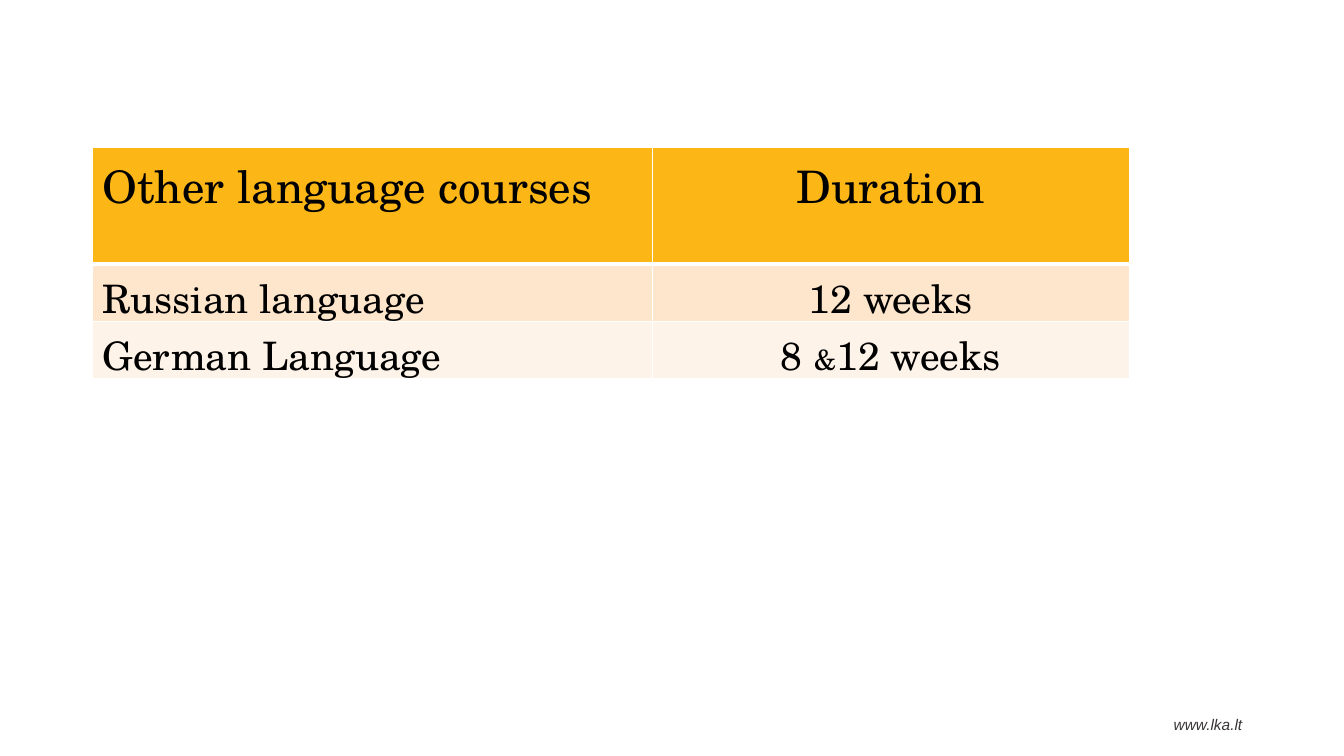
from lxml import etree
from pptx import Presentation
from pptx.dml.color import RGBColor
from pptx.enum.text import PP_ALIGN
from pptx.oxml.ns import qn
from pptx.util import Inches, Pt

LEFT, CENTER, RIGHT = PP_ALIGN.LEFT, PP_ALIGN.CENTER, PP_ALIGN.RIGHT
BLANK_LAYOUT = 6
COLORS = {
    "header": "FCB716",
    "band_dark": "FEE6CC",
    "band_light": "FEF3E8",
    "border": "FFFFFF",
    "text": "000000",
    "footer": "3B3536",
}


class SlideBuilder:
    """Holds the style and the current slide."""

    table_font = "TeX Gyre Schola"
    footer_font = "Arial"

    def __init__(self, prs):
        self.s = prs.slides.add_slide(prs.slide_layouts[BLANK_LAYOUT])

    def style(self, font, name, size, color):
        font.name = name
        font.size = Pt(size)
        font.color.rgb = RGBColor.from_string(COLORS[color])

    def footer(self, text, left, top, width, height):
        sp = self.s.shapes.add_textbox(
            Inches(left), Inches(top), Inches(width), Inches(height))
        tf = sp.text_frame
        tf.word_wrap = True
        p = tf.paragraphs[0]
        p.text = text
        p.alignment = RIGHT
        self.style(p.font, self.footer_font, 11, "footer")
        p.font.italic = True

    def border(self, cell, side, width):
        tc_pr = cell._tc.get_or_add_tcPr()
        ln = etree.SubElement(tc_pr, qn(f"a:ln{side}"), w=str(Pt(width)))
        fill = etree.SubElement(ln, qn("a:solidFill"))
        etree.SubElement(fill, qn("a:srgbClr"), val=COLORS["border"])

    def cell(self, cell, runs, size, fill, align, bottom):
        # Borders come before the fill in the cell properties
        for side in "LRTB":
            self.border(cell, side, bottom if side == "B" else 1)
        cell.fill.solid()
        cell.fill.fore_color.rgb = RGBColor.from_string(COLORS[fill])
        p = cell.text_frame.paragraphs[0]
        p.alignment = align
        self.style(p.font, self.table_font, size, "text")
        p.font.bold = False
        for text, run_size in runs:
            r = p.add_run()
            r.text = text
            if run_size:
                r.font.size = Pt(run_size)

    def table(self, rows, left, top, col_widths, row_heights):
        table = self.s.shapes.add_table(
            len(rows), len(col_widths), Inches(left), Inches(top),
            Inches(sum(col_widths)), Inches(sum(row_heights))).table
        for column, width in zip(table.columns, col_widths):
            column.width = Inches(width)
        for row, height in zip(table.rows, row_heights):
            row.height = Inches(height)
        fills = ["header", "band_dark", "band_light"]
        for i, values in enumerate(rows):
            size, bottom = (32, 3) if i == 0 else (28, 1)
            for j, value in enumerate(values):
                runs = [(value, None)] if isinstance(value, str) else value
                self.cell(table.cell(i, j), runs, size, fills[i],
                          CENTER if j else LEFT, bottom)


def main():
    prs = Presentation()
    prs.slide_width, prs.slide_height = Inches(13.33), Inches(7.5)
    slide = SlideBuilder(prs)

    # Web address at the bottom right
    slide.footer("www.lka.lt", 9.53, 7.04, 2.89, 0.29)

    # Course table
    courses = [
        ["Other language courses", "Duration"],
        ["Russian language", "12 weeks"],
        ["German Language", [("8 ", None), ("&", 20), ("12 weeks", None)]],
    ]
    slide.table(courses, 0.92, 1.46, [5.55, 4.73], [1.16, 0.56, 0.56])

    prs.save("out.pptx")


if __name__ == "__main__":
    main()
